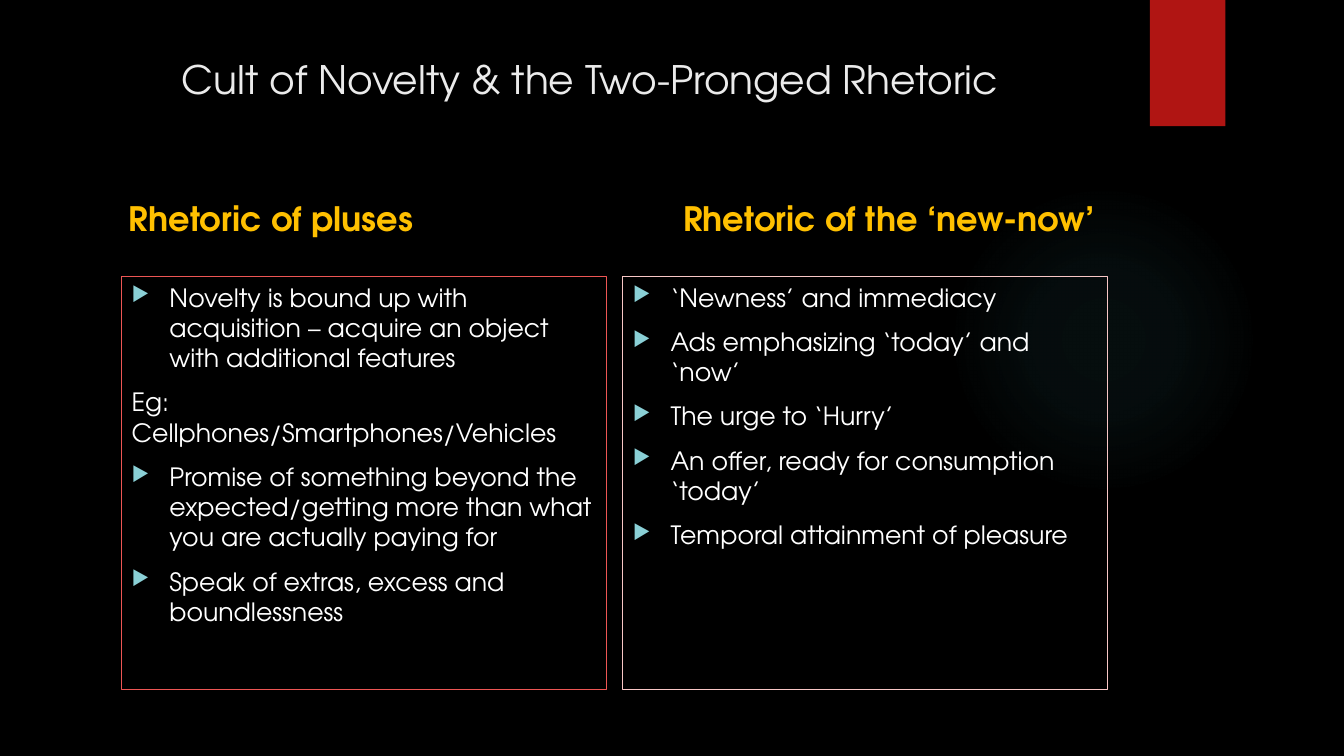
from lxml import etree
from pptx import Presentation
from pptx import util as u
from pptx.dml.color import RGBColor
from pptx.enum import shapes, text
from pptx.oxml import parse_xml
from pptx.oxml.ns import nsdecls, qn


class Theme:
    font = "TeX Gyre Adventor"
    background, ribbon, glow = "000000", "B01513", "50B9C1"
    title, heading, body, bullet = "EBEBEB", "FFC000", "FFFFFF", "8AD0D6"
    title_size, heading_size, body_size = 28, 24, 18


class SlideBuilder:
    def __init__(self, deck, theme):
        self.theme = theme
        self.page = deck.slides.add_slide(deck.slide_layouts[6])
        fill = self.page.background.fill
        fill.solid()
        fill.fore_color.rgb = RGBColor.from_string(theme.background)

    def shape(self, kind, place, fill=None, line=None):
        item = self.page.shapes.add_shape(kind, *map(u.Cm, place))
        item.shadow.inherit = False
        if fill:
            item.fill.solid()
            item.fill.fore_color.rgb = RGBColor.from_string(fill)
        else:
            item.fill.background()
        if line:
            item.line.color.rgb = RGBColor.from_string(line)
            item.line.width = u.Pt(0.75)
        else:
            item.line.fill.background()
        return item

    def glow(self, place):
        """Add a circle that fades out from its centre."""
        circle = self.shape(shapes.MSO_SHAPE.OVAL, place)
        stops = "".join(
            f'<a:gs pos="{at * 1000}"><a:srgbClr val="{self.theme.glow}">'
            f'<a:alpha val="{alpha * 1000}"/></a:srgbClr></a:gs>'
            for at, alpha in ((0, 7), (36, 6), (69, 0), (100, 0)))
        gradient = parse_xml(
            f'<a:gradFill {nsdecls("a")} rotWithShape="1"><a:gsLst>{stops}</a:gsLst>'
            '<a:path path="circle"><a:fillToRect l="50000" t="50000" '
            'r="50000" b="50000"/></a:path></a:gradFill>')
        properties = circle.element.spPr
        properties.replace(properties.find(qn("a:noFill")), gradient)

    def add_lines(self, box, lines, size, color, bold=False,
                  align=text.PP_ALIGN.LEFT, anchor=text.MSO_ANCHOR.TOP):
        """Fill a box with (wording, bulleted) lines."""
        frame = box.text_frame
        frame.word_wrap = True
        frame.vertical_anchor = anchor
        for index, (wording, bulleted) in enumerate(lines):
            para = frame.paragraphs[0] if index == 0 else frame.add_paragraph()
            para.alignment = align
            para.space_before = u.Pt(10 if index else 0)
            if bulleted:
                self.add_bullet(para)
            span = para.add_run()
            span.text = wording
            style = {"name": self.theme.font, "size": u.Pt(size), "bold": bold}
            for name, value in style.items():
                setattr(span.font, name, value)
            span.font.color.rgb = RGBColor.from_string(color)

    def add_bullet(self, para):
        properties = para._p.get_or_add_pPr()
        indent = u.Cm(0.95)
        properties.set("marL", str(indent))
        properties.set("indent", str(-indent))
        color = etree.SubElement(properties, qn("a:buClr"))
        etree.SubElement(color, qn("a:srgbClr"), val=self.theme.bullet)
        etree.SubElement(properties, qn("a:buSzPct"), val="80000")
        etree.SubElement(properties, qn("a:buChar"), char="▶")

    def label(self, place, wording, size, color, **format_values):
        box = self.page.shapes.add_textbox(*map(u.Cm, place))
        self.add_lines(box, [(wording, False)], size, color, **format_values)

    def panel(self, place, lines, line):
        box = self.shape(shapes.MSO_SHAPE.RECTANGLE, place, line=line)
        self.add_lines(box, lines, self.theme.body_size, self.theme.body)


COLUMNS = [
    ("Rhetoric of pluses", 3, 3.07, "ED5654", [
        ("Novelty is bound up with acquisition – acquire an object "
         "with additional features", True),
        ("Eg: Cellphones/Smartphones/Vehicles", False),
        ("Promise of something beyond the expected/getting more than "
         "what you are actually paying for", True),
        ("Speak of extras, excess and boundlessness", True)]),
    ("Rhetoric of the ‘new-now’", 16.97, 15.7, "F9C7C6", [
        ("‘Newness’ and immediacy", True),
        ("Ads emphasizing ‘today’ and ‘now’", True),
        ("The urge to ‘Hurry’", True),
        ("An offer, ready for consumption ‘today’", True),
        ("Temporal attainment of pleasure", True)]),
]


def main():
    deck = Presentation()
    deck.slide_width, deck.slide_height = u.Cm(33.87), u.Cm(19.05)
    theme = Theme()
    builder = SlideBuilder(deck, theme)
    builder.glow((23.9, 4.65, 7.82, 7.82))
    builder.shape(shapes.MSO_SHAPE.RECTANGLE, (28.98, 0, 1.9, 3.18), fill=theme.ribbon)
    builder.label((1.8, 1.27, 26.14, 2.44), "Cult of Novelty & the Two-Pronged Rhetoric",
                  theme.title_size, theme.title, align=text.PP_ALIGN.CENTER)
    width = 12.22
    for heading, heading_left, panel_left, line, lines in COLUMNS:
        builder.label((heading_left, 4.52, width, 1.6), heading, theme.heading_size,
                      theme.heading, bold=True, anchor=text.MSO_ANCHOR.BOTTOM)
        builder.panel((panel_left, 6.98, width, 10.39), lines, line)
    deck.save("out.pptx")


if __name__ == "__main__":
    main()
